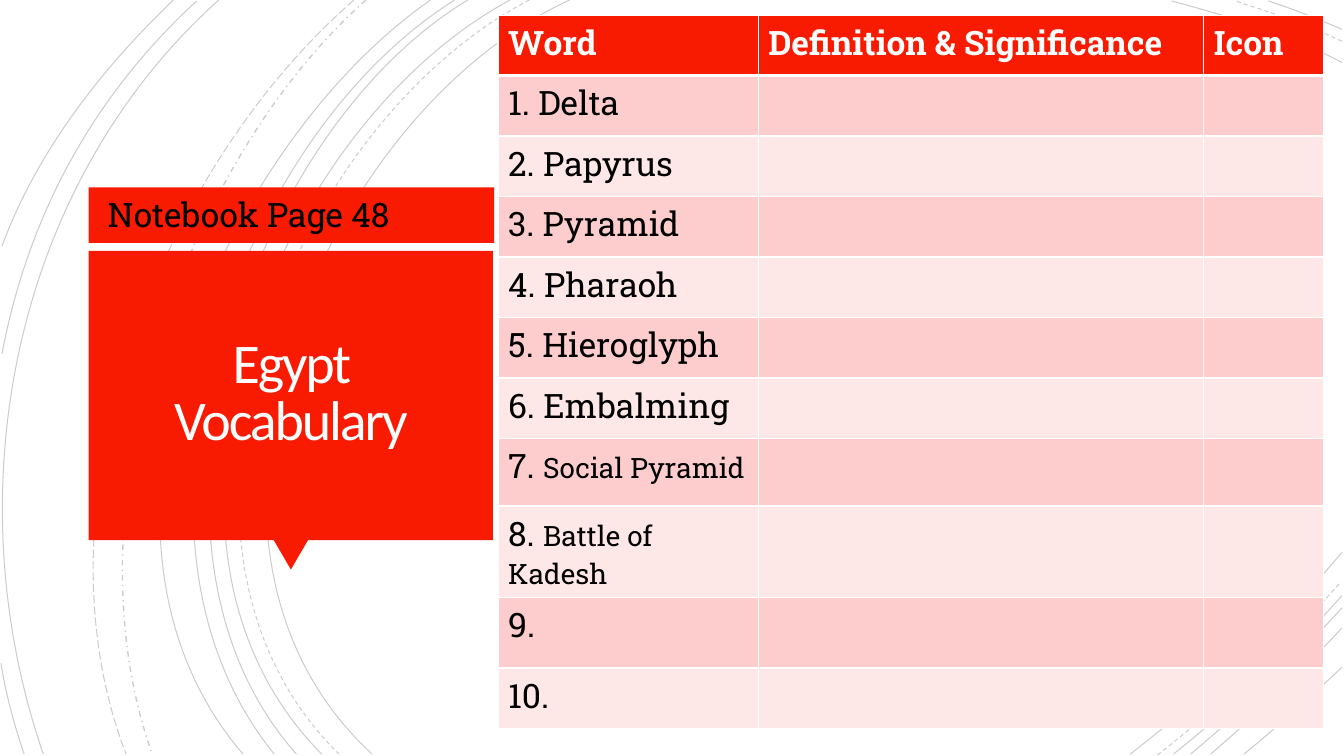
"""Build the Egypt vocabulary slide: arc backdrop, title callout and word table."""
from dataclasses import dataclass

from lxml.etree import SubElement
from pptx import Presentation
from pptx.dml.color import RGBColor as Rgb
from pptx.enum.dml import MSO_LINE as Dash
from pptx.enum.shapes import MSO_SHAPE as Preset
from pptx.enum.text import MSO_ANCHOR as Anchor, MSO_AUTO_SIZE as AutoSize, PP_ALIGN as Align
from pptx.oxml import parse_xml
from pptx.oxml.ns import nsdecls, qn
from pptx.util import Cm, Pt

TITLE = "Egypt Vocabulary"
NOTE = "Notebook Page 48"
HEADINGS = ["Word", "Definition & Significance", "Icon"]
WORDS = [
    ("1. Delta", ""), ("2. Papyrus", ""), ("3. Pyramid", ""), ("4. Pharaoh", ""),
    ("5. Hieroglyph", ""), ("6. Embalming", ""), ("7. ", "Social Pyramid"),
    ("8. ", "Battle of Kadesh"), ("9.", ""), ("10.", ""),
]
COLUMNS = [2.58, 4.42, 1.19]
ROWS = [0.6] * 7 + [0.67, 0.74, 0.7, 0.6]
ARCS = [
    (Dash.SOLID, 0.75, [
        (5.65, 0, 3.15, 1.15, 1.43, 5.4, 3.69, 7.48),
        (13.31, 0.62, 12.78, 0.34, 12.18, 0.16, 11.62, 0.01),
        (11.21, 7.48, 11.97, 6.9, 12.69, 6.22, 13.31, 5.48),
    ]),
    (Dash.DASH, 0.75, [
        (5.25, 0, 2.85, 1.25, 1.23, 5.37, 3.36, 7.48),
        (13.31, 0.41, 12.97, 0.25, 12.6, 0.12, 12.25, 0.01),
        (11.48, 7.49, 12.13, 6.98, 12.75, 6.4, 13.3, 5.77),
    ]),
    (Dash.SOLID, 0.75, [
        (5.06, 0, 2.7, 1.27, 1.1, 5.37, 3.19, 7.48),
        (13.31, 0.29, 13.07, 0.19, 12.83, 0.09, 12.58, 0.01),
        (11.64, 7.48, 12.23, 7.01, 12.8, 6.48, 13.31, 5.91),
        (4.64, 0, 2.44, 1.33, 1.1, 5.41, 2.94, 7.48),
        (11.81, 7.48, 12.34, 7.04, 12.84, 6.55, 13.31, 6.03),
        (4.51, 0, 2.31, 1.38, 0.97, 5.33, 2.72, 7.48),
        (12.01, 7.48, 12.46, 7.09, 12.9, 6.67, 13.31, 6.23),
        (4.27, 0, 2.17, 1.47, 0.53, 5.29, 2.41, 7.48),
        (12.34, 7.48, 12.67, 7.21, 12.99, 6.92, 13.31, 6.62),
    ]),
    (Dash.DASH_DOT, 1, [(3.63, 0, 1.76, 1.66, 0.65, 5.09, 1.51, 7.48)]),
    (Dash.LONG_DASH, 0.75, [(3.51, 0, 1.57, 1.69, 0.29, 4.99, 1.25, 7.48)]),
    (Dash.SOLID, 0.75, [
        (2.17, 0, 0.11, 1.85, -0.46, 4.9, 0.43, 7.48),
        (1.95, 0.01, 0.92, 0.96, 0.28, 2.14, 0.02, 3.51),
        (0.01, 6.58, 0.06, 6.89, 0.14, 7.19, 0.24, 7.48),
        (1.72, 0, 1, 0.69, 0.37, 1.5, 0.02, 2.44),
    ]),
]
CALLOUT = [
    (Preset.RECTANGLE, 0, (0.88, 1.86, 4.02, 0.55)),
    (Preset.ISOSCELES_TRIANGLE, 180, (2.71, 5.35, 0.35, 0.3)),
    (Preset.RECTANGLE, 0, (0.88, 2.49, 4.01, 2.87)),
]


@dataclass(frozen=True)
class Theme:
    red: Rgb = Rgb(0xF8, 0x1B, 0x02)
    bands: tuple = (Rgb(0xFC, 0xCD, 0xCC), Rgb(0xFE, 0xE8, 0xE7))
    black: Rgb = Rgb(0, 0, 0)
    white: Rgb = Rgb(255, 255, 255)
    title_ink: Rgb = Rgb(0xFF, 0xFE, 0xFF)
    title_face: str = "Calibri"
    face: str = "Roboto Slab"
    title_size: Pt = Pt(40)
    size: Pt = Pt(24)
    small: Pt = Pt(20)


THEME = Theme()


def length(inches):
    return Cm(inches * 2.54)


def style(font, size, colour, face=THEME.face, bold=False):
    font.size, font.name, font.bold = size, face, bold
    font.color.rgb = colour


def add_arc(page, curve, dash, weight):
    start, *others = zip(map(length, curve[::2]), map(length, curve[1::2]))
    builder = page.shapes.build_freeform(*start)
    builder.add_line_segments(others, close=False)
    arc = builder.convert_to_shape()
    outline = arc.element.find(".//" + qn("a:path"))
    segments = outline.findall(qn("a:lnTo"))
    bezier = SubElement(outline, qn("a:cubicBezTo"))
    for segment in segments:
        bezier.append(segment[0])
        outline.remove(segment)
    arc.shadow.inherit = False
    arc.fill.background()
    arc.line.width, arc.line.dash_style = Pt(weight), dash
    arc.line.color.rgb = THEME.black
    colour = arc.line._ln.find(".//" + qn("a:srgbClr"))
    SubElement(colour, qn("a:alpha"), val="20000")


def add_callout(page):
    for preset, angle, place in CALLOUT:
        box = page.shapes.add_shape(preset, *map(length, place))
        box.rotation = angle
        box.shadow.inherit = False
        box.fill.solid()
        box.fill.fore_color.rgb = THEME.red
        box.line.fill.background()
    title = page.shapes.title
    box.element.addnext(title.element)
    title.left, title.top, title.width, title.height = map(length, (0.97, 2.57, 3.83, 2.69))
    frame = title.text_frame
    frame.text = TITLE
    frame.word_wrap, frame.auto_size = True, AutoSize.NONE
    frame.vertical_anchor = Anchor.MIDDLE
    frame.margin_left = frame.margin_right = frame.margin_top = frame.margin_bottom = length(0.25)
    para = frame.paragraphs[0]
    para.alignment, para.line_spacing = Align.CENTER, 0.85
    style(para.font, THEME.title_size, THEME.title_ink, THEME.title_face)
    para.runs[0].font._element.set("spc", "-150")


def paint_cell(cell, fill, top, bottom):
    cell.fill.solid()
    cell.fill.fore_color.rgb = fill
    edges = (("L", 1), ("R", 1), ("T", top), ("B", bottom))
    for place, (side, weight) in enumerate(edges):
        border = parse_xml(
            f'<a:ln{side} {nsdecls("a")} w="{Pt(weight)}"><a:solidFill>'
            f'<a:srgbClr val="{THEME.white}"/></a:solidFill></a:ln{side}>')
        cell._tc.get_or_add_tcPr().insert(place, border)


def add_table(page):
    place = map(length, (4.94, 0.15, sum(COLUMNS), sum(ROWS)))
    table = page.shapes.add_table(len(ROWS), len(COLUMNS), *place).table
    for column, width in zip(table.columns, COLUMNS):
        column.width = length(width)
    for row, height in zip(table.rows, ROWS):
        row.height = length(height)
    for index, row in enumerate(table.rows):
        fill = THEME.bands[(index - 1) % 2] if index else THEME.red
        for cell in row.cells:
            paint_cell(cell, fill, 3 if index == 1 else 1, 1 if index else 3)
    for cell, heading in zip(table.rows[0].cells, HEADINGS):
        cell.text = heading
        style(cell.text_frame.paragraphs[0].font, THEME.size, THEME.white, bold=True)
    for index, (lead, term) in enumerate(WORDS, 1):
        para = table.cell(index, 0).text_frame.paragraphs[0]
        style(para.font, THEME.size, THEME.black)
        para.add_run().text = lead
        if term:
            span = para.add_run()
            span.text = term
            span.font.size = THEME.small


def add_note(page):
    frame = page.shapes.add_textbox(*map(length, (0.97, 1.87, 3.83, 0.5))).text_frame
    frame.word_wrap, frame.auto_size = True, AutoSize.SHAPE_TO_FIT_TEXT
    frame.text = NOTE
    style(frame.paragraphs[0].font, THEME.size, THEME.black)


def main():
    deck = Presentation()
    deck.slide_width, deck.slide_height = length(13.33), length(7.5)
    page = deck.slides.add_slide(deck.slide_layouts[5])
    for dash, weight, curves in ARCS:
        for curve in curves:
            add_arc(page, curve, dash, weight)
    add_callout(page)
    add_table(page)
    add_note(page)
    deck.save("out.pptx")


if __name__ == "__main__":
    main()
